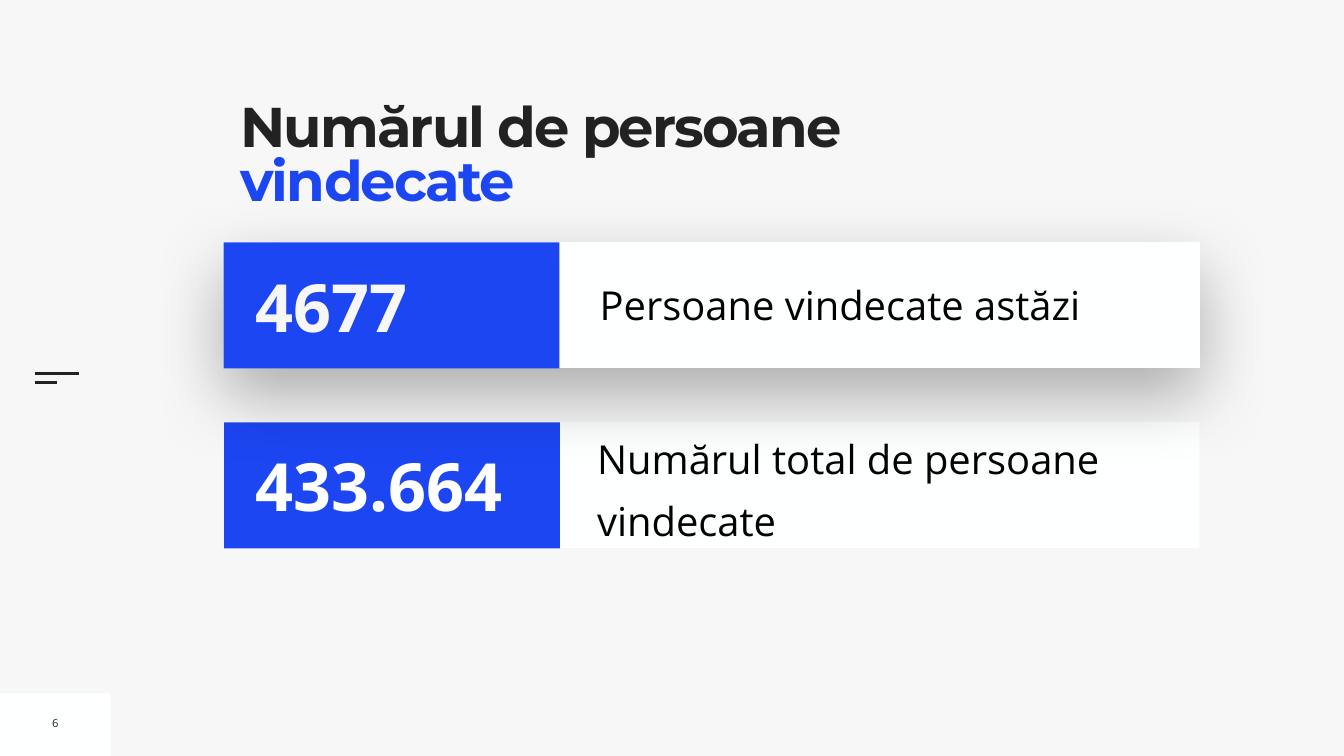
from dataclasses import dataclass

from lxml.etree import SubElement
from pptx import Presentation
from pptx.dml.color import RGBColor as RGB
from pptx.enum.shapes import MSO_CONNECTOR as CONN, MSO_SHAPE as SHAPE
from pptx.enum.text import MSO_ANCHOR as ANCHOR, PP_ALIGN as ALIGN
from pptx.oxml.ns import qn
from pptx.util import Inches, Pt


@dataclass(frozen=True)
class Theme:
    """Colours, fonts and type sizes of the slide."""
    paper: RGB = RGB(0xF7, 0xF7, 0xF7)
    white: RGB = RGB(0xFE, 0xFF, 0xFF)
    pure_white: RGB = RGB(0xFF, 0xFF, 0xFF)
    ink: RGB = RGB(0x22, 0x22, 0x22)
    black: RGB = RGB(0, 0, 0)
    blue: RGB = RGB(0x1D, 0x46, 0xF3)
    heading: str = "Montserrat"
    body: str = "Open Sans"
    title_pt: int = 80
    number_pt: int = 95
    label_pt: int = 57
    page_pt: int = 16


T = Theme()


def add_rect(slide, x, y, w, h, color):
    """Add a plain filled rectangle without line or shadow."""
    sp = slide.shapes.add_shape(SHAPE.RECTANGLE, *map(Inches, (x, y, w, h)))
    sp.fill.solid()
    sp.fill.fore_color.rgb = color
    sp.line.fill.background()
    sp.shadow.inherit = False
    return sp


def add_text(slide, box, runs, font, size, bold=False, anchor=ANCHOR.MIDDLE, inset=0):
    """Add a one-paragraph text box from (text, colour) runs."""
    tf = slide.shapes.add_textbox(*map(Inches, box)).text_frame
    tf.word_wrap = True
    tf.vertical_anchor = anchor
    tf.margin_left = tf.margin_right = tf.margin_top = tf.margin_bottom = Inches(inset)
    p = tf.paragraphs[0]
    p.font.name, p.font.size, p.font.bold = font, Pt(size), bold
    for text, color in runs:
        r = p.add_run()
        r.text = text
        r.font.name, r.font.size, r.font.bold = font, Pt(size), bold
        r.font.color.rgb = color
    return tf


def add_shadow(sp):
    """Give a shape a wide, soft shadow falling downwards."""
    effects = sp._element.spPr.find(qn("a:effectLst"))
    shadow = SubElement(effects, qn("a:outerShdw"), blurRad=str(Pt(100)),
                        dist=str(Pt(40)), dir="5400000", rotWithShape="0")
    color = SubElement(shadow, qn("a:srgbClr"), val=str(T.black))
    SubElement(color, qn("a:alpha"), val="30000")


def add_menu_mark(slide, x, y):
    """Draw the two short lines at the left edge."""
    for dy, length in ((0, 0.88), (0.18, 0.44)):
        ln = slide.shapes.add_connector(
            CONN.STRAIGHT, *map(Inches, (x, y + dy, x + length, y + dy)))
        ln.line.color.rgb = T.ink
        ln.line.width = Pt(3)
        SubElement(ln._element.spPr, qn("a:effectLst"))


def add_title(slide, x, y, w, h):
    """Place the two-colour heading."""
    tf = add_text(slide, (x, y, w, h),
                  (("Numărul de persoane ", T.ink), ("vindecate", T.blue)),
                  T.heading, T.title_pt, bold=True, anchor=ANCHOR.TOP)
    p = tf.paragraphs[0]
    p.line_spacing = 0.8
    for r in p.runs:
        r._r.get_or_add_rPr().set("spc", "-270")


def add_page_number(slide, x, y, w, h, number):
    """Place the page number on its corner tile."""
    add_rect(slide, x, y, w, h, T.white)
    tf = add_text(slide, (x + 0.93, y + 0.33, 0.34, 0.51),
                  ((number, T.ink),), T.body, T.page_pt, inset=0.1)
    tf.word_wrap = False
    tf.paragraphs[0].alignment = ALIGN.CENTER


def add_card(slide, x, y, w, h, number, color, label, label_box):
    """Place a blue number tile and its label; return the card and label text."""
    card = add_rect(slide, x, y, w, h, T.white)
    dx, dy, label_w, label_h = label_box
    tf = add_text(slide, (x + dx, y + dy, label_w, label_h),
                  ((label, T.black),), T.body, T.label_pt)
    add_rect(slide, x, y + 0.01, 6.66, h, T.blue)
    add_text(slide, (x + 0.53, y + 0.36, 6.03, 1.8),
             ((number, color),), T.body, T.number_pt, bold=True, inset=0.1)
    return card, tf


def main():
    """Build and save the slide."""
    prs = Presentation()
    prs.slide_width, prs.slide_height = Inches(26.67), Inches(15)
    slide = prs.slides.add_slide(prs.slide_layouts[6])
    slide.background.fill.solid()
    slide.background.fill.fore_color.rgb = T.paper

    add_menu_mark(slide, 0.69, 7.41)
    add_title(slide, 4.77, 2.07, 13.01, 2.73)
    add_page_number(slide, 0, 13.76, 2.2, 1.24, "6")

    _, tf = add_card(slide, 4.45, 8.37, 19.35, 2.5, "433.664", T.pure_white,
                     "Numărul total de persoane vindecate", (7.4, 0.02, 11.95, 2.36))
    p = tf.paragraphs[0]
    p.line_spacing, p.space_before = 1.3, Pt(20)

    card, _ = add_card(slide, 4.44, 4.8, 19.37, 2.5, "4677", T.paper,
                       "Persoane vindecate astăzi", (7.46, 0.67, 11.56, 1.16))
    add_shadow(card)
    prs.save("out.pptx")


if __name__ == "__main__":
    main()
